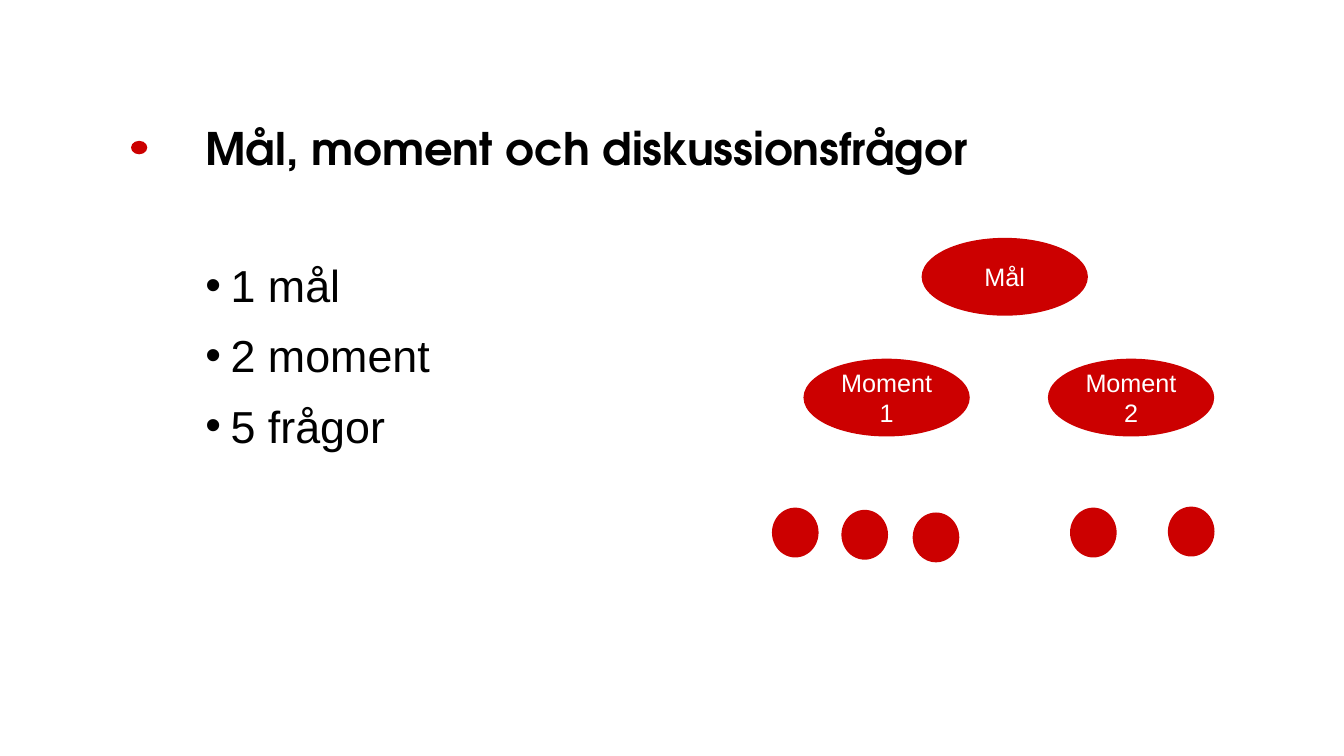
from dataclasses import dataclass

from lxml import etree
from pptx import Presentation
from pptx.dml.color import RGBColor
from pptx.enum.shapes import MSO_SHAPE
from pptx.enum.text import MSO_ANCHOR, PP_ALIGN
from pptx.oxml.ns import qn
from pptx.slide import Slide
from pptx.text.text import Font
from pptx.util import Pt

OVAL = MSO_SHAPE.OVAL
MARK = MSO_SHAPE.FLOWCHART_CONNECTOR
MIDDLE, TOP = MSO_ANCHOR.MIDDLE, MSO_ANCHOR.TOP
LEFT, CENTER = PP_ALIGN.LEFT, PP_ALIGN.CENTER

COLORS = {"red": "CC0000", "black": "000000", "white": "FFFFFF"}
HEAD, BODY = "TeX Gyre Adventor", "Arial"
INDENT = 18


@dataclass
class Node:
    left: float
    top: float
    width: float
    height: float
    text: str = ""
    kind: MSO_SHAPE = OVAL


GOALS = [
    Node(x, y, 118.8, 55.6, text)
    for x, y, text in [
        (658.3, 169.9, "Mål"),
        (573.9, 256.2, "Moment 1"),
        (748.5, 256.2, "Moment 2"),
    ]
]
DOTS = [
    Node(x, y, 33.3, 35.6)
    for x, y in [(551.4, 362.6), (601, 364.2), (651.9, 366.1),
                 (764.3, 362.6), (834.2, 361.9)]
]
BULLET = Node(93.6, 100.6, 11.6, 9.6, kind=MARK)


def style(font: Font, name: str, size: float, color: str, bold: bool = False) -> None:
    font.name = name
    font.size = Pt(size)
    font.bold = bold
    font.color.rgb = RGBColor.from_string(COLORS[color])


def add_title(slide: Slide, text: str) -> None:
    title = slide.shapes.title
    title.left, title.top = Pt(139.7), Pt(87.1)
    title.width, title.height = Pt(675.4), Pt(76.3)
    frame = title.text_frame
    frame.text = text
    frame.vertical_anchor = TOP
    para = frame.paragraphs[0]
    para.alignment = LEFT
    para.line_spacing = 0.9
    style(para.runs[0].font, HEAD, 32, "black", True)


def add_list(slide: Slide, items: list[str]) -> None:
    box = slide.shapes.add_textbox(Pt(139.7), Pt(178.6), Pt(280), Pt(283.7))
    frame = box.text_frame
    frame.word_wrap = True
    frame.text = "\n".join(items)
    for i, para in enumerate(frame.paragraphs):
        props = para._p.get_or_add_pPr()
        props.set("marL", str(Pt(INDENT)))
        props.set("indent", str(-Pt(INDENT)))
        etree.SubElement(props, qn("a:buFont")).set("typeface", BODY)
        etree.SubElement(props, qn("a:buChar")).set("char", "•")
        para.line_spacing = 1.05
        para.space_before = Pt(10 if i else 0)
        style(para.runs[0].font, BODY, 32, "black")


def add_node(slide: Slide, node: Node) -> None:
    shape = slide.shapes.add_shape(
        node.kind, Pt(node.left), Pt(node.top), Pt(node.width), Pt(node.height))
    shape.shadow.inherit = False
    shape.fill.solid()
    shape.fill.fore_color.rgb = RGBColor.from_string(COLORS["red"])
    shape.line.fill.background()
    if node.text:
        frame = shape.text_frame
        frame.text = node.text
        frame.word_wrap = True
        frame.vertical_anchor = MIDDLE
        para = frame.paragraphs[0]
        para.alignment = CENTER
        style(para.runs[0].font, BODY, 18, "white")


def main() -> None:
    deck = Presentation()
    deck.slide_width, deck.slide_height = Pt(960), Pt(540)
    slide = deck.slides.add_slide(deck.slide_layouts[5])
    add_title(slide, "Mål, moment och diskussionsfrågor")
    add_list(slide, ["1 mål", "2 moment", "5 frågor"])
    for node in [*GOALS, *DOTS, BULLET]:
        add_node(slide, node)
    deck.save("out.pptx")


if __name__ == "__main__":
    main()
